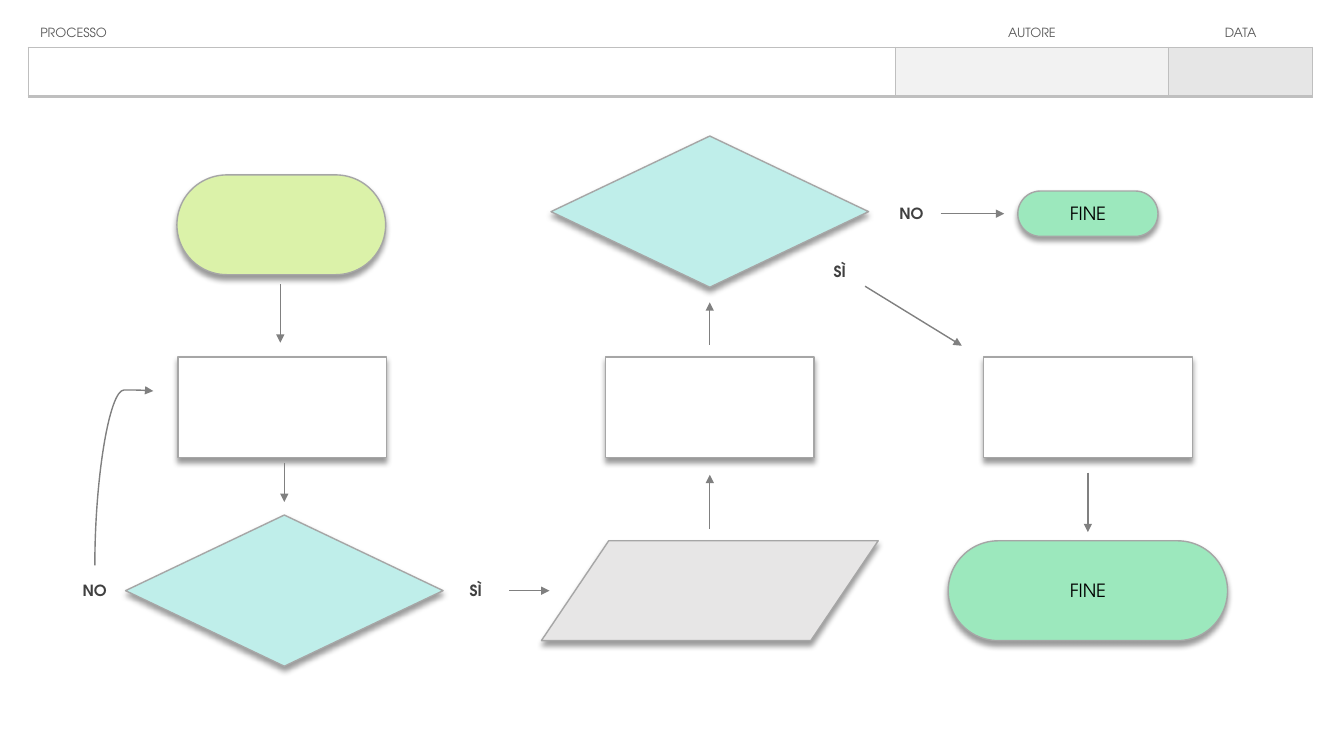
from dataclasses import dataclass
from lxml.etree import SubElement
from pptx import Presentation
from pptx.dml.color import RGBColor
from pptx.enum.shapes import MSO_CONNECTOR, MSO_SHAPE
from pptx.enum.text import MSO_ANCHOR, PP_ALIGN
from pptx.oxml.ns import qn
from pptx.util import Inches, Pt


@dataclass(frozen=True)
class Theme:
    font: str = "TeX Gyre Adventor"
    head: int = 9
    label: int = 11
    body: int = 13
    black: str = "000000"
    dark: str = "404040"
    grey: str = "595959"
    arrow: str = "808080"
    edge: str = "A6A6A6"
    rule: str = "BFBFBF"
    white: str = "FFFFFF"
    lime: str = "DBF2A9"
    aqua: str = "BFEEEA"
    mint: str = "9CE8BD"
    silver: str = "E7E6E6"


theme = Theme()

# Content: header columns as title, width, fill, alignment, left margin
columns = [
    ("PROCESSO", 8.6, theme.white, PP_ALIGN.LEFT, 0.12),
    ("AUTORE", 2.71, "F2F2F2", PP_ALIGN.CENTER, 0.01),
    ("DATA", 1.43, "E6E6E6", PP_ALIGN.CENTER, 0.01),
]
rows = [0.28, 0.49]

# Kinds of step: preset, width, height, fill
kinds = {
    "start": (MSO_SHAPE.ROUNDED_RECTANGLE, 2.07, 0.99, theme.lime),
    "task": (MSO_SHAPE.FLOWCHART_PROCESS, 2.07, 1, theme.white),
    "choice": (MSO_SHAPE.FLOWCHART_DECISION, 3.15, 1.5, theme.aqua),
    "data": (MSO_SHAPE.FLOWCHART_DATA, 3.34, 0.99, theme.silver),
    "stop": (MSO_SHAPE.ROUNDED_RECTANGLE, 1.39, 0.45, theme.mint),
    "end": (MSO_SHAPE.ROUNDED_RECTANGLE, 2.77, 0.99, theme.mint),
}
mid, low = 4.04, 5.86
left, centre, right = 2.8, 7.04, 10.79

# Steps and answers, placed by their centres
steps = [
    ("start", 2.79, 2.23, ""),
    ("task", left, mid, ""),
    ("choice", 2.82, low, ""),
    ("data", centre, low, ""),
    ("task", centre, mid, ""),
    ("choice", centre, 2.1, ""),
    ("stop", right, 2.12, "FINE"),
    ("task", right, mid, ""),
    ("end", right, low, "FINE"),
]
answers = [
    ("NO", 0.94, low),
    ("SÌ", 4.72, low),
    ("SÌ", 8.33, 2.69),
    ("NO", 9.04, 2.12),
]
arrows = [
    (2.78, 2.82, 2.78, 3.4),
    (2.82, 4.59, 2.82, 4.98),
    (5.05, low, 5.45, low),
    (centre, 5.25, centre, 4.71),
    (centre, 3.42, centre, 3),
    (8.58, 2.84, 9.54, 3.43),
    (9.33, 2.12, 9.96, 2.12),
    (right, 4.69, right, 5.28),
]
loop = (0.94, 5.61, 1.52, 3.88)

deck = Presentation()
deck.slide_width, deck.slide_height = Inches(13.33), Inches(7.5)
slide = deck.slides.add_slide(deck.slide_layouts[6])
shapes = slide.shapes


def rgb(code):
    return RGBColor.from_string(code)


def write(frame, text, size=theme.body, color=theme.black, bold=False,
          align=PP_ALIGN.CENTER):
    para = frame.paragraphs[0]
    para.alignment = align
    run = para.add_run()
    run.text = text
    font = run.font
    font.name, font.size, font.bold = theme.font, Pt(size), bold
    font.color.rgb = rgb(color)


def fit(frame):
    frame.word_wrap = True
    frame.vertical_anchor = MSO_ANCHOR.MIDDLE
    frame.margin_left = frame.margin_right = Inches(0.02)
    frame.margin_top = frame.margin_bottom = Inches(0.02)


def box(x, y, wide, high):
    return [Inches(v) for v in (x - wide / 2, y - high / 2, wide, high)]


def shade(shape):
    shape.shadow.inherit = False
    effect = shape.element.spPr.find(qn("a:effectLst"))
    outer = SubElement(effect, qn("a:outerShdw"), blurRad=str(Pt(4)),
                       dist=str(Pt(3)), dir="5400000", algn="t", rotWithShape="0")
    color = SubElement(outer, qn("a:srgbClr"), val=theme.black)
    SubElement(color, qn("a:alpha"), val="40000")


def link(kind, ends):
    line = shapes.add_connector(kind, *[Inches(v) for v in ends])
    line.line.color.rgb = rgb(theme.arrow)
    line.line.width = Pt(1)
    props = line.element.spPr
    SubElement(props.find(qn("a:ln")), qn("a:tailEnd"), type="triangle")
    SubElement(props, qn("a:effectLst"))
    return props


def border(cell, sides):
    props = cell._tc.get_or_add_tcPr()
    for side, width in sides:
        line = SubElement(props, qn("a:ln" + side), w=str(Pt(width)))
        fill = SubElement(line, qn("a:solidFill"))
        SubElement(fill, qn("a:srgbClr"), val=theme.rule)


# Flow steps
for kind, x, y, text in steps:
    preset, wide, high, fill = kinds[kind]
    step = shapes.add_shape(preset, *box(x, y, wide, high))
    if preset == MSO_SHAPE.ROUNDED_RECTANGLE:
        step.adjustments[0] = 0.5
    step.fill.solid()
    step.fill.fore_color.rgb = rgb(fill)
    step.line.color.rgb = rgb(theme.edge)
    step.line.width = Pt(1)
    shade(step)
    if text:
        fit(step.text_frame)
        write(step.text_frame, text)

# Answers beside the choices
for text, x, y in answers:
    label = shapes.add_textbox(*box(x, y, 0.8, 0.5))
    fit(label.text_frame)
    write(label.text_frame, text, size=theme.label, color=theme.dark, bold=True)

# Straight arrows
for ends in arrows:
    link(MSO_CONNECTOR.STRAIGHT, ends)

# Curved arrow back to the first task: a flipped curve turned a quarter
x1, y1, x2, y2 = loop
x, y = (x1 + x2) / 2, (y1 + y2) / 2
dx, dy = (y1 - y2) / 2, (x2 - x1) / 2
props = link(MSO_CONNECTOR.CURVE, (x + dx, y + dy, x - dx, y - dy))
props.find(qn("a:xfrm")).set("rot", "5400000")
geom = props.find(qn("a:prstGeom"))
guides = geom.find(qn("a:avLst"))
if guides is None:
    guides = SubElement(geom, qn("a:avLst"))
SubElement(guides, qn("a:gd"), name="adj1", fmla="val 100600")

# Header table
total = sum(col[1] for col in columns)
table = shapes.add_table(2, len(columns), Inches(0.28), Inches(0.19),
                         Inches(total), Inches(sum(rows))).table
table.first_row = table.horz_banding = False
for row, high in zip(table.rows, rows):
    row.height = Inches(high)
for i, (title, wide, fill, align, inset) in enumerate(columns):
    table.columns[i].width = Inches(wide)
    head, blank = table.cell(0, i), table.cell(1, i)
    border(head, [("B", 1)])
    head.fill.background()
    head.vertical_anchor = MSO_ANCHOR.MIDDLE
    head.margin_left, head.margin_right = Inches(inset), Inches(0.01)
    head.margin_top, head.margin_bottom = Inches(0.01), 0
    write(head.text_frame, title, size=theme.head, color=theme.grey, align=align)
    border(blank, [("L", 1), ("R", 1), ("T", 1), ("B", 2.25)])
    blank.fill.solid()
    blank.fill.fore_color.rgb = rgb(fill)

deck.save("out.pptx")
